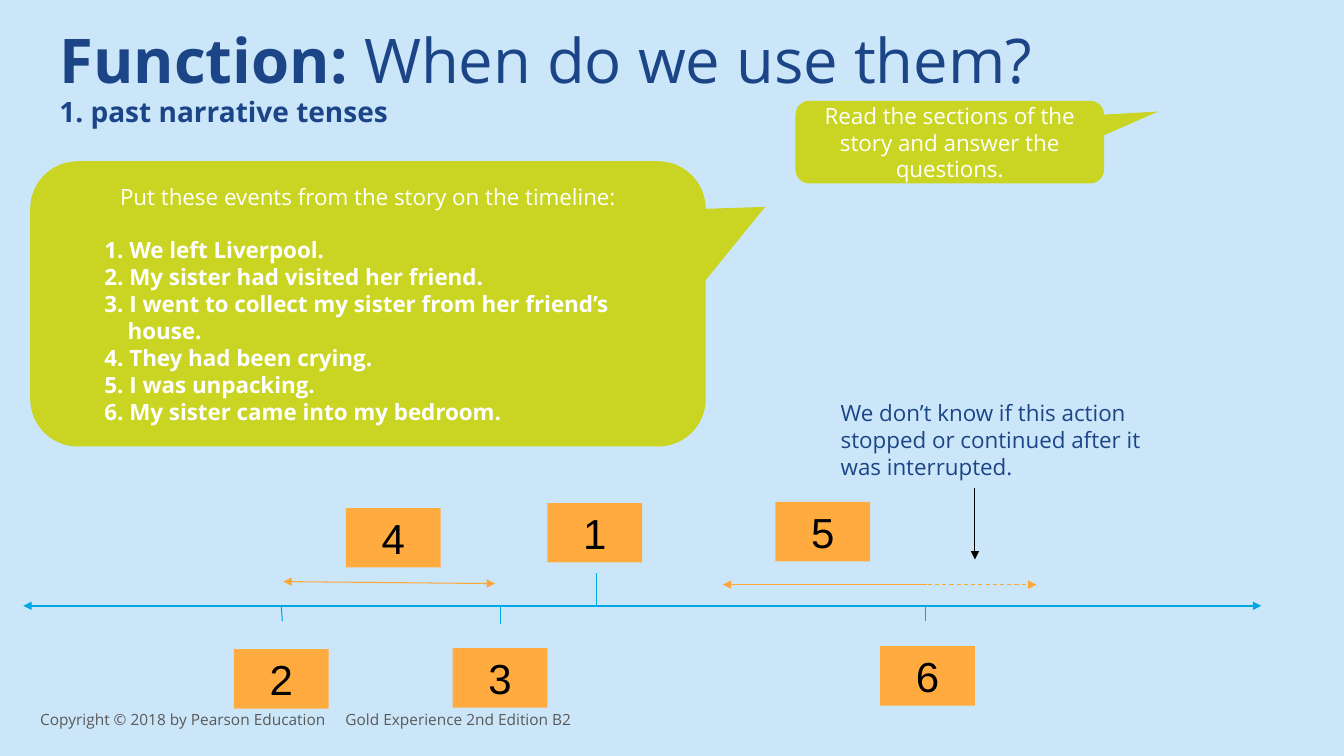
from lxml.etree import SubElement
from pptx import Presentation
from pptx.dml.color import RGBColor
from pptx.enum.dml import MSO_LINE
from pptx.enum.shapes import MSO_CONNECTOR, MSO_SHAPE
from pptx.enum.text import MSO_ANCHOR, MSO_AUTO_SIZE, PP_ALIGN
from pptx.oxml.ns import qn
from pptx.util import Inches, Pt

NAVY, BLUE, LIME = "1C4587", "00A7E3", "C9D522"
AMBER, WHITE, BLACK = "FFAB40", "FFFFFF", "000000"
EVENTS = [
    "1. We left Liverpool.",
    "2. My sister had visited her friend.",
    "3. I went to collect my sister from her friend’s\vhouse.",
    "4. They had been crying.",
    "5. I was unpacking.",
    "6. My sister came into my bedroom.",
]


def color(code):
    return RGBColor.from_string(code)


def place(shape, box):
    shape.left, shape.top, shape.width, shape.height = map(Inches, box)


def add_run(para, text, size, code, bold=False, face="Open Sans"):
    for i, part in enumerate(text.split("\v")):
        if i:
            para.add_line_break()
        run = para.add_run()
        run.text = part
        font = run.font
        font.name, font.size, font.bold = face, Pt(size), bold
        font.color.rgb = color(code)


def set_frame(shape, anchor=MSO_ANCHOR.TOP):
    frame = shape.text_frame
    frame.word_wrap = True
    frame.auto_size = MSO_AUTO_SIZE.NONE
    frame.vertical_anchor = anchor
    return frame


def add_text(slide, box, text, size, code, bold=False, anchor=MSO_ANCHOR.TOP):
    shape = slide.shapes.add_textbox(*map(Inches, box))
    para = set_frame(shape, anchor).paragraphs[0]
    add_run(para, text, size, code, bold)
    return para


def add_block(slide, kind, box, code):
    shape = slide.shapes.add_shape(kind, *map(Inches, box))
    shape.shadow.inherit = False
    shape.fill.solid()
    shape.fill.fore_color.rgb = color(code)
    shape.line.fill.background()
    return shape


def add_line(slide, start, end, code, width=0.75, head=False, tail=False, dash=False):
    line = slide.shapes.add_connector(
        MSO_CONNECTOR.STRAIGHT, *map(Inches, (*start, *end)))
    line.line.color.rgb = color(code)
    line.line.width = Pt(width)
    if dash:
        line.line.dash_style = MSO_LINE.DASH
    props = line.line._get_or_add_ln()
    for tag, used in (("a:headEnd", head), ("a:tailEnd", tail)):
        if used:
            SubElement(props, qn(tag), type="triangle")
    SubElement(line._element.spPr, qn("a:effectLst"))


def add_title(slide, box):
    left, top, width, height = box
    title = slide.shapes.title
    place(title, box)
    para = set_frame(title).paragraphs[0]
    para.alignment = PP_ALIGN.LEFT
    para.line_spacing = 0.9
    add_run(para, "Function: ", 44, NAVY, True)
    add_run(para, "When do we use them?", 44, NAVY)
    para = add_text(slide, (left, top + 0.68, 10.1, 0.8),
                    "1. past narrative tenses", 20, NAVY, True)
    para.line_spacing = 0.9


def add_bubble(slide, box, tip, text):
    shape = add_block(slide, MSO_SHAPE.ROUNDED_RECTANGULAR_CALLOUT, box, LIME)
    for i, value in enumerate((*tip, 0.167)):
        shape.adjustments[i] = value
    frame = set_frame(shape, MSO_ANCHOR.MIDDLE)
    para = frame.paragraphs[0]
    para.alignment = PP_ALIGN.CENTER
    add_run(para, text, 16, WHITE)
    return frame


def add_events(slide, box):
    frame = add_bubble(slide, box, (0.588, -0.34),
                       "Put these events from the story on the timeline:")
    for i, event in enumerate(EVENTS):
        para = frame.add_paragraph()
        para.alignment = PP_ALIGN.LEFT
        if i == 0:
            para.space_before = Pt(19)
        # Hanging indent lines up the wrapped event
        props = para._p.get_or_add_pPr()
        props.set("marL", str(Inches(0.73)))
        props.set("indent", str(Inches(-0.23)))
        add_run(para, event, 16, WHITE, True)


def add_card(slide, label, left, top):
    card = add_block(slide, MSO_SHAPE.RECTANGLE, (left, top, 0.94, 0.59), AMBER)
    para = set_frame(card, MSO_ANCHOR.MIDDLE).paragraphs[0]
    para.alignment = PP_ALIGN.CENTER
    add_run(para, label, 30, BLACK, face="Arial")


def add_axis(slide, box):
    left, top, width, height = box
    axis = top + 1.03
    # Main line and its ticks
    add_line(slide, (left, axis), (left + width, axis), BLUE, 1.75, True, True)
    for x, lean, rise in ((5.69, 0, -0.33), (2.56, 0.01, 0.15),
                          (4.73, 0, 0.18), (8.95, 0, 0.15)):
        add_line(slide, (left + x, axis), (left + x + lean, axis + rise), BLUE)
    # Spans of the longer actions
    span = axis - 0.21
    add_line(slide, (left + 2.58, span - 0.03), (left + 4.68, span - 0.01),
             "FDA739", head=True, tail=True)
    add_line(slide, (left + 6.94, span), (left + 8.96, span), "FDA739", head=True)
    add_line(slide, (left + 8.9, span), (left + 10.05, span), "FDA739",
             tail=True, dash=True)
    # Numbered cards
    for label, x, y in (("1", 5.2, 0.01), ("2", 2.09, 1.46), ("3", 4.26, 1.45),
                        ("4", 3.2, 0.06), ("5", 7.46, 0), ("6", 8.5, 1.43)):
        add_card(slide, label, left + x, top + y)


def add_note(slide, box):
    left, top, width, height = box
    add_text(slide, box, "We don’t know if this action stopped or continued "
             "after it was interrupted.", 16, NAVY)
    x, y = left + 1.43, top + height + 0.02
    add_line(slide, (x, y), (x, y + 0.71), BLACK, tail=True)


def add_foot(slide, box):
    add_text(slide, box, "Copyright © 2018 by Pearson Education     "
             "Gold Experience 2nd Edition B2", 11, "595959",
             anchor=MSO_ANCHOR.MIDDLE)


def main():
    deck = Presentation()
    deck.slide_width, deck.slide_height = Inches(13.33), Inches(7.5)
    slide = deck.slides.add_slide(deck.slide_layouts[5])
    slide.background.fill.solid()
    slide.background.fill.fore_color.rgb = color("CBE6F9")
    add_title(slide, (0.49, 0.25, 12.24, 1.44))
    add_foot(slide, (0.3, 6.94, 6.92, 0.4))
    add_events(slide, (0.3, 1.6, 6.7, 2.83))
    add_axis(slide, (0.23, 4.98, 12.28, 2.05))
    add_note(slide, (8.24, 3.91, 3.43, 0.91))
    add_bubble(slide, (7.89, 1, 3.06, 0.82), (0.676, -0.37),
               "Read the sections of the story and answer the questions.")
    deck.save("out.pptx")


if __name__ == "__main__":
    main()
